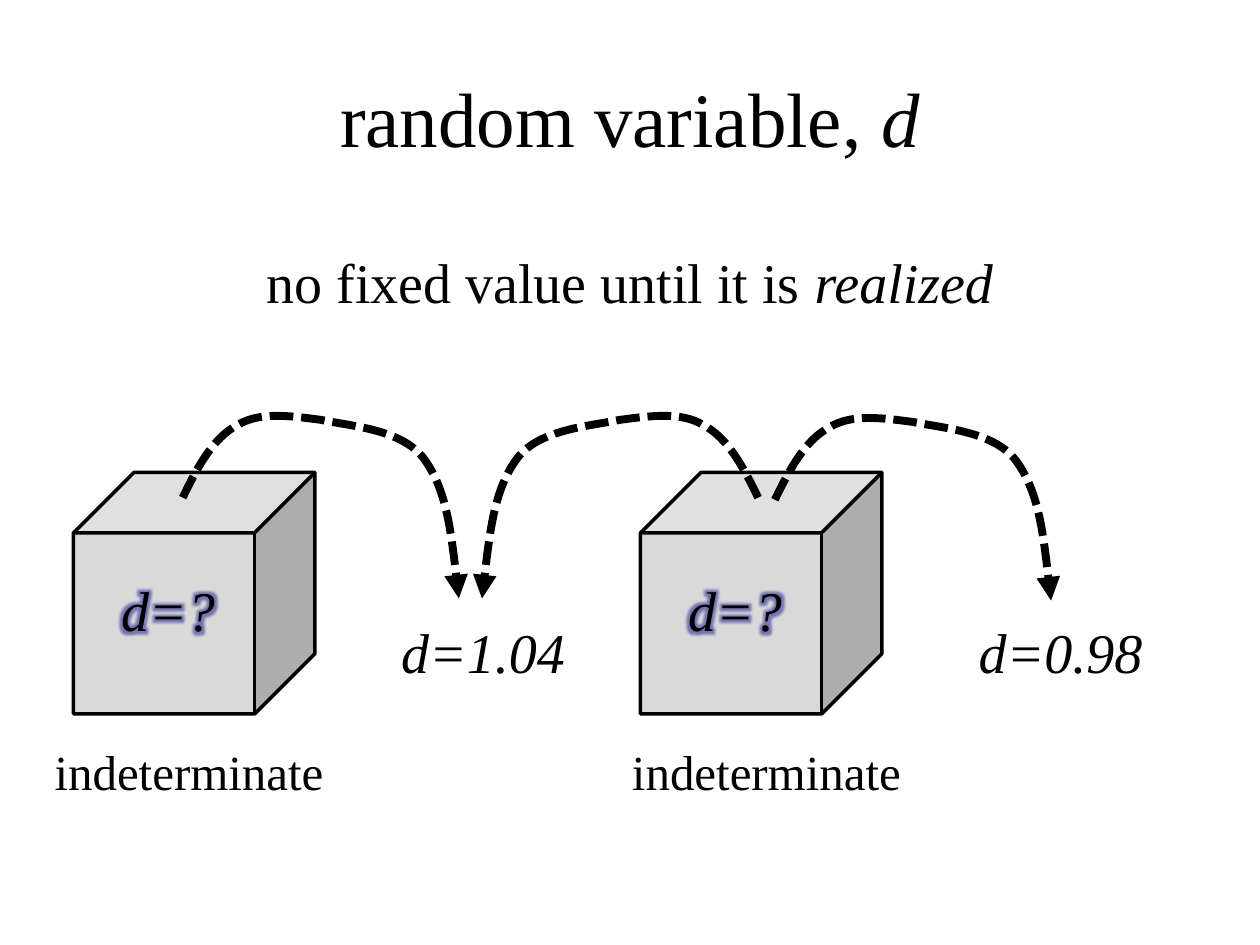
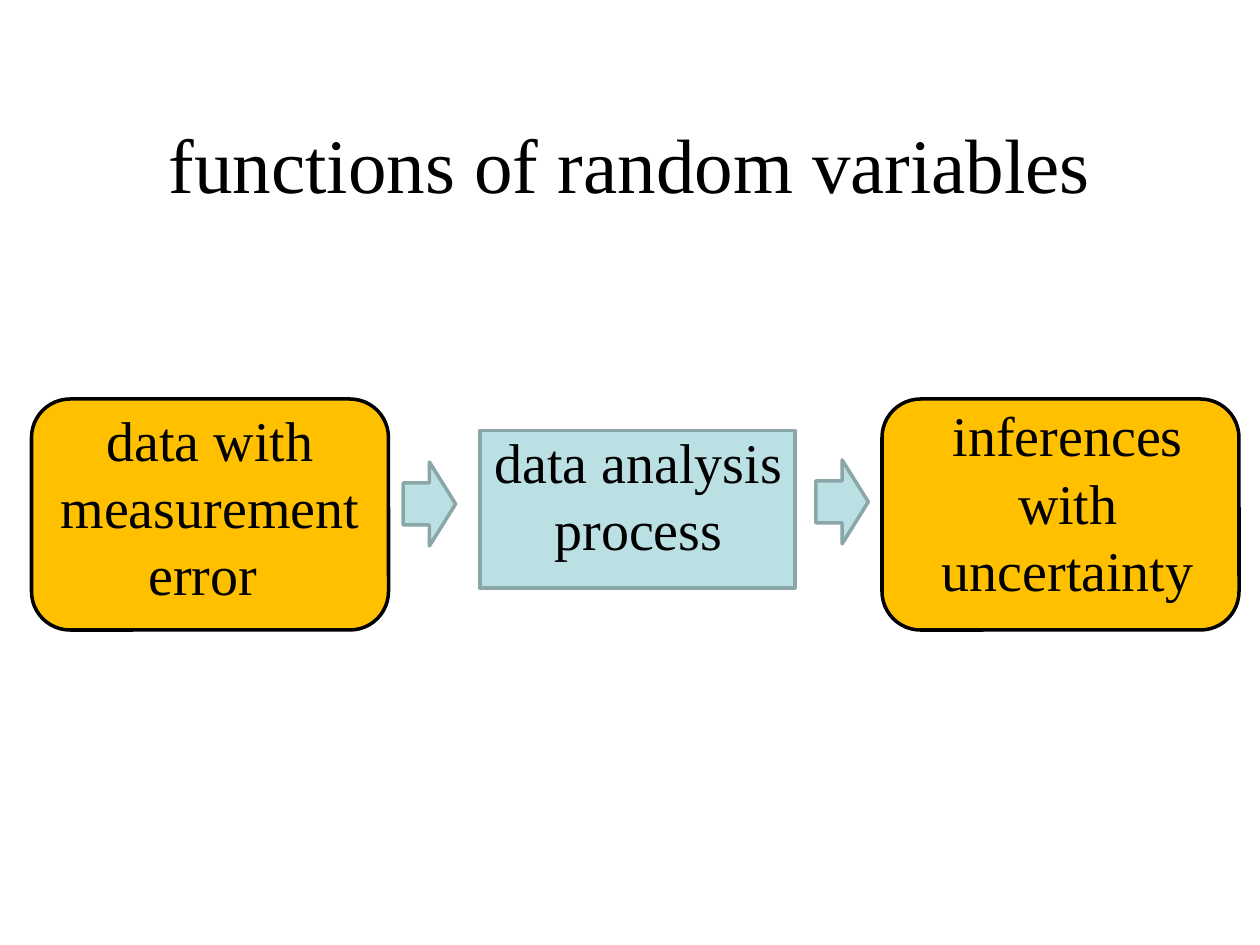
from lxml import etree
from pptx import Presentation
from pptx import util as u
from pptx.dml import color
from pptx.enum import dml, shapes, text
from pptx.oxml import ns

PX = 7620
FONT = "Times New Roman"
BLACK, GREY, AMBER = "000000", "D9D9D9", "FFC000"
TEAL, TEAL_EDGE, GLOW = "BBE0E3", "8AA6A8", "333399"
LEAP = [(0, 82), (14, 53), (29, 25), (52, 13), (73, 0), (102, 4), (132, 8),
        (161, 14), (208, 17), (229, 44), (251, 73), (257, 125), (263, 178)]


def px(*lengths):
    return [u.Emu(length * PX) for length in lengths]


def rgb(value):
    return color.RGBColor.from_string(value)


def child(parent, tag, **attributes):
    return etree.SubElement(parent, ns.qn(tag), **attributes)


def add_glow(span):
    effects = etree.Element(ns.qn("a:effectLst"))
    glow = child(effects, "a:glow", rad="101600")
    shade = child(glow, "a:srgbClr", val=GLOW)
    child(shade, "a:alpha", val="60000")
    span.font._element.find(ns.qn("a:solidFill")).addnext(effects)


def write_text(frame, words, size=32, italic=False, italic_tail="",
               anchor=text.MSO_ANCHOR.TOP, leading=None, glow=False):
    frame.word_wrap = True
    frame.auto_size = text.MSO_AUTO_SIZE.NONE
    frame.vertical_anchor = anchor
    para = frame.paragraphs[0]
    para.alignment = text.PP_ALIGN.CENTER
    if leading:
        para.line_spacing = u.Pt(size * leading)
    for part, slanted in ((words, italic), (italic_tail, True)):
        if part:
            span = para.add_run()
            span.text = part
            span.font.name = FONT
            span.font.size = u.Pt(size)
            span.font.italic = slanted
            span.font.color.rgb = rgb(BLACK)
            if glow:
                add_glow(span)


class Lecture:
    def __init__(self):
        self.deck = Presentation()
        self.deck.slide_width, self.deck.slide_height = px(1200, 900)
        self.page = None

    def add_page(self, title, top, italic_tail=""):
        self.page = self.deck.slides.add_slide(self.deck.slide_layouts[5])
        box = self.page.shapes.title
        box.left, box.top, box.width, box.height = px(60, top, 1080, 150)
        write_text(box.text_frame, title, size=44, italic_tail=italic_tail,
                   anchor=text.MSO_ANCHOR.MIDDLE)

    def add_body(self, words, left, top, width, height, **style):
        box = self.page.shapes.add_textbox(*px(left, top, width, height))
        write_text(box.text_frame, words, leading=1.2, **style)

    def add_value(self, words, left, top, width, **style):
        box = self.page.shapes.add_textbox(*px(left, top, width, 100))
        write_text(box.text_frame, words, italic=True,
                   anchor=text.MSO_ANCHOR.MIDDLE, **style)

    def add_block(self, kind, left, top, width, height, fill, edge=BLACK):
        block = self.page.shapes.add_shape(kind, *px(left, top, width, height))
        block.shadow.inherit = False
        block.fill.solid()
        block.fill.fore_color.rgb = rgb(fill)
        block.line.color.rgb = rgb(edge)
        block.line.width = u.Pt(2)

    def add_leap(self, left, top, direction=1):
        points = [(left + direction * x, top + y) for x, y in LEAP]
        builder = self.page.shapes.build_freeform(*points[0], scale=PX)
        builder.add_line_segments(points[1:], close=False)
        leap = builder.convert_to_shape()
        leap.shadow.inherit = False
        leap.fill.background()
        leap.line.color.rgb = rgb(BLACK)
        leap.line.width = u.Pt(4.5)
        leap.line.dash_style = dml.MSO_LINE.SQUARE_DOT
        child(leap.line._get_or_add_ln(), "a:tailEnd", type="triangle")
        outline = next(leap._element.iter(ns.qn("a:path")))
        segments = outline.findall(ns.qn("a:lnTo"))
        for start in range(0, len(segments), 3):
            curve = child(outline, "a:cubicBezTo")
            for segment in segments[start:start + 3]:
                curve.append(segment[0])
                outline.remove(segment)


def add_random_variable(lecture):
    lecture.add_page("random variable, ", 36, italic_tail="d")
    lecture.add_body("no fixed value until it is ", 60, 230, 1080, 90,
                     italic_tail="realized")
    for cube_left, caption_left in ((70, 10), (610, 560)):
        lecture.add_block(shapes.MSO_SHAPE.CUBE, cube_left, 450, 230, 230, GREY)
        lecture.add_value("d=?", cube_left + 10, 530, 160, glow=True)
        lecture.add_body("indeterminate", caption_left, 700, 340, 80, size=28)
    for value, left in (("d=1.04", 330), ("d=0.98", 880)):
        lecture.add_value(value, left, 570, 260)
    lecture.add_leap(174, 392)
    lecture.add_leap(722, 392, direction=-1)
    lecture.add_leap(738, 394)


def add_functions(lecture):
    lecture.add_page("functions of random variables", 80)
    lecture.add_block(shapes.MSO_SHAPE.RECTANGLE, 457, 410, 300, 150,
                      TEAL, TEAL_EDGE)
    for left in (30, 840):
        lecture.add_block(shapes.MSO_SHAPE.ROUNDED_RECTANGLE, left, 380,
                          340, 220, AMBER)
    for left, top in ((384, 440), (777, 438)):
        lecture.add_block(shapes.MSO_SHAPE.RIGHT_ARROW, left, top, 50, 80,
                          TEAL, TEAL_EDGE)
    for words, left, top in (("data with measurement error ", 40, 380),
                             ("data analysis process", 448, 401),
                             ("inferences with uncertainty", 857, 376)):
        lecture.add_body(words, left, top, 320, 230)


def main():
    lecture = Lecture()
    add_random_variable(lecture)
    add_functions(lecture)
    lecture.deck.save("out.pptx")


if __name__ == "__main__":
    main()
